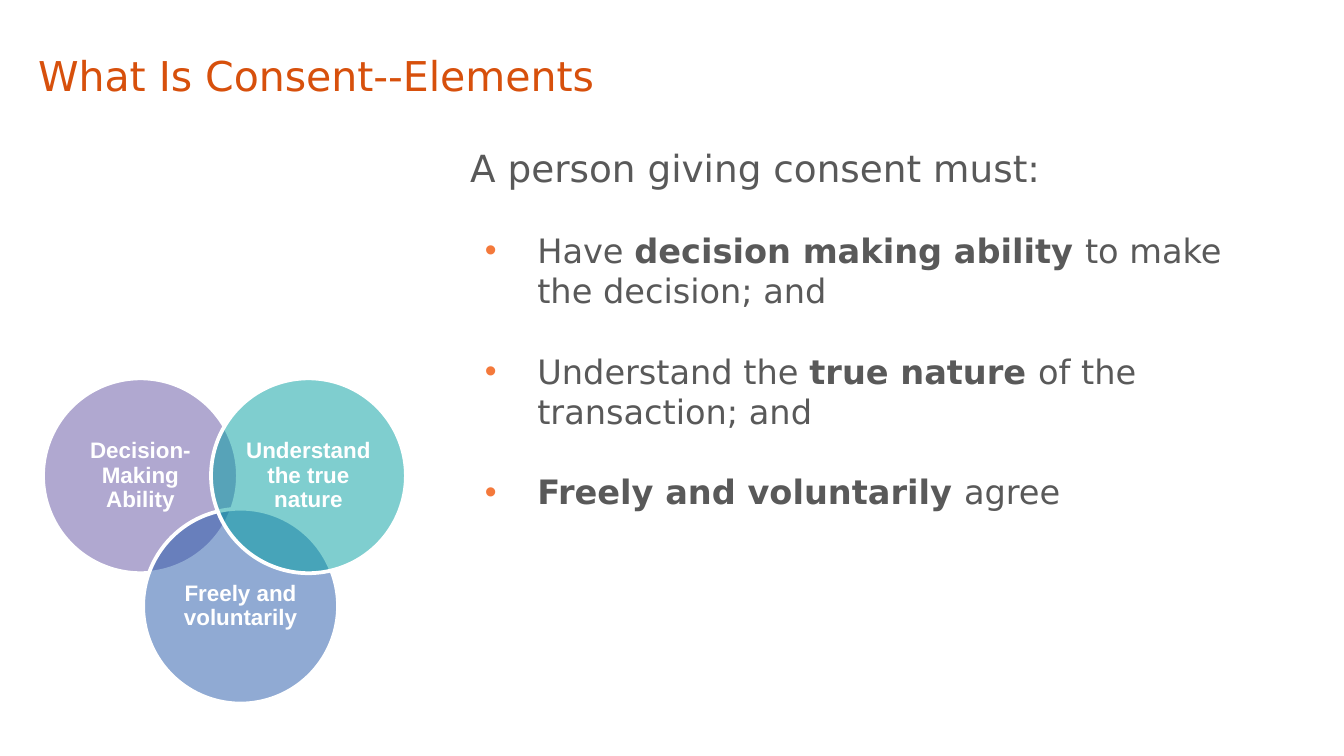
from lxml import etree
from pptx import Presentation
from pptx.dml.color import RGBColor
from pptx.enum.shapes import MSO_SHAPE
from pptx.enum.text import MSO_ANCHOR, PP_ALIGN
from pptx.oxml.ns import qn
from pptx.util import Inches, Pt

OVAL = MSO_SHAPE.OVAL
MIDDLE = MSO_ANCHOR.MIDDLE
TOP = MSO_ANCHOR.TOP
CENTER = PP_ALIGN.CENTER

CELL = 0.1
COLUMNS, ROWS = 100, 56.25
CIRCLE_SIZE = 14.5
UPPER_ROW, LOWER_ROW = 28.15, 37.85

BULLETS = [
    [("Have ", False), ("decision making ability ", True), ("to make the decision; and", False)],
    [("Understand the ", False), ("true nature ", True), ("of the transaction; and", False)],
    [("Freely and voluntarily ", True), ("agree", False)],
]
CIRCLES = [
    ("Decision-Making Ability", 3.2, UPPER_ROW, "6353A3"),
    ("Freely and voluntarily", 10.65, LOWER_ROW, "2257A9"),
    ("Understand the true nature", 15.7, UPPER_ROW, "009FA1"),
]


def color(value):
    return RGBColor.from_string(value)


def grid(cells):
    return Inches(cells * CELL)


class ConsentSlide:
    """Draws styled elements on the current slide, measured in grid cells."""

    body_font, label_font = "DejaVu Sans", "Arial"
    title_color, text_color = "D7500C", "595959"
    bullet_color, white = "F4793B", "FFFFFF"

    def __init__(self, presentation):
        self.slide = presentation.slides.add_slide(presentation.slide_layouts[6])

    def format_run(self, run, size, value, name, bold=False):
        run.font.size = Pt(size)
        run.font.name = name
        run.font.bold = bold
        run.font.color.rgb = color(value)

    def text_box(self, text, column, row, width, height, size, value, anchor=TOP):
        shape = self.slide.shapes.add_textbox(grid(column), grid(row), grid(width), grid(height))
        frame = shape.text_frame
        frame.word_wrap = True
        frame.vertical_anchor = anchor
        frame.text = text
        self.format_run(frame.paragraphs[0].runs[0], size, value, self.body_font)
        return frame

    def bullet(self, frame, parts, size=18):
        paragraph = frame.add_paragraph()
        paragraph.space_before = Pt(21.5)
        properties = paragraph._p.get_or_add_pPr()
        properties.set("marL", str(Inches(0.5)))
        properties.set("indent", str(Inches(-0.39)))
        bullet_color = etree.SubElement(properties, qn("a:buClr"))
        etree.SubElement(bullet_color, qn("a:srgbClr"), val=self.bullet_color)
        etree.SubElement(properties, qn("a:buFont"), typeface=self.label_font)
        etree.SubElement(properties, qn("a:buChar"), char="•")
        for text, bold in parts:
            run = paragraph.add_run()
            run.text = text
            self.format_run(run, size, self.text_color, self.body_font, bold)

    def circle(self, text, column, row, value):
        shape = self.slide.shapes.add_shape(
            OVAL, grid(column), grid(row), grid(CIRCLE_SIZE), grid(CIRCLE_SIZE))
        shape.shadow.inherit = False
        shape.fill.solid()
        shape.fill.fore_color.rgb = color(value)
        fill_color = shape.fill._xPr.find(qn("a:solidFill"))[0]
        etree.SubElement(fill_color, qn("a:alpha"), val="50000")
        shape.line.color.rgb = color(self.white)
        shape.line.width = Pt(2)
        frame = shape.text_frame
        frame.word_wrap = True
        frame.vertical_anchor = MIDDLE
        frame.margin_left = frame.margin_right = 0
        frame.margin_top = frame.margin_bottom = 0
        frame.text = text
        paragraph = frame.paragraphs[0]
        paragraph.alignment = CENTER
        paragraph.line_spacing = 0.9
        self.format_run(paragraph.runs[0], 12, self.white, self.label_font, True)


def main():
    presentation = Presentation()
    presentation.slide_width, presentation.slide_height = grid(COLUMNS), grid(ROWS)
    page = ConsentSlide(presentation)
    page.text_box("What Is Consent--Elements", 1.85, 0.9, 90, 9.4, 22, page.title_color, MIDDLE)
    body = page.text_box("A person giving consent must:", 34, 10.3, 59.6, 29.6, 20, page.text_color)
    for parts in BULLETS:
        page.bullet(body, parts)
    for circle in CIRCLES:
        page.circle(*circle)
    presentation.save("out.pptx")


if __name__ == "__main__":
    main()
